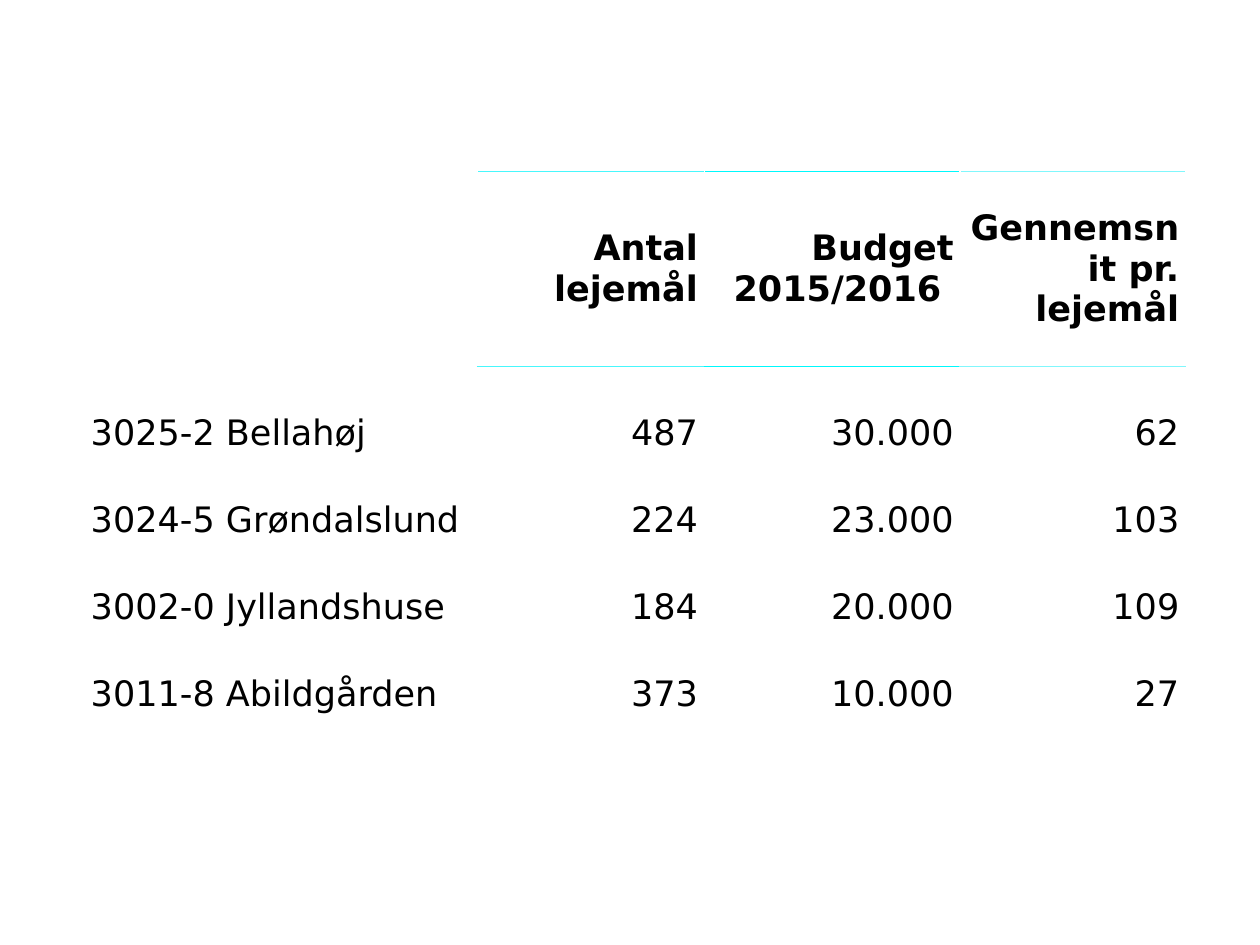
from lxml import etree
from pptx import Presentation
from pptx import util as u
from pptx.dml.color import RGBColor
from pptx.enum import text
from pptx.oxml.ns import qn

HEADINGS = ["Antal lejemål", "Budget 2015/2016 ", "Gennemsnit pr. lejemål"]
RULE_COLORS = ["48F7FC", "00F8FC", "80F7FC"]
ESTATES = [
    ("3025-2 Bellahøj", "487", "30.000", "62"),
    ("3024-5 Grøndalslund", "224", "23.000", "103"),
    ("3002-0 Jyllandshuse", "184", "20.000", "109"),
    ("3011-8 Abildgården", "373", "10.000", "27"),
]
COLUMN_SHARES = [15.6, 15.6, 18, 20.3, 17.9]
ROW_SHARES = [20.67] + [9.2] * len(ESTATES)
NAME_COLUMNS = 2


def color(value):
    return RGBColor.from_string(value)


class BudgetPage:
    font_name = "DejaVu Sans"
    font_size = 20
    ink = "000000"
    paper = "FFFFFF"

    def __init__(self, deck):
        self.deck = deck
        self.page = deck.slides.add_slide(deck.slide_layouts[6])

    def across(self, percent):
        return round(self.deck.slide_width * percent / 100)

    def down(self, percent):
        return round(self.deck.slide_height * percent / 100)

    def table(self, left, top, columns, rows):
        frame = self.page.shapes.add_table(
            len(rows), len(columns), self.across(left), self.down(top),
            self.across(sum(columns)), self.down(sum(rows)))
        grid = frame.table
        grid.first_row = grid.horz_banding = False
        for column, share in zip(grid.columns, columns):
            column.width = self.across(share)
        for row, share in zip(grid.rows, rows):
            row.height = self.down(share)
        for cell in grid.iter_cells():
            cell.fill.solid()
            cell.fill.fore_color.rgb = color(self.paper)
        return grid

    def label(self, cell, words, align=text.PP_ALIGN.RIGHT,
              anchor=text.MSO_ANCHOR.BOTTOM, bold=False):
        cell.margin_left = cell.margin_right = u.Inches(0.05)
        cell.margin_top = cell.margin_bottom = 0
        cell.vertical_anchor = anchor
        para = cell.text_frame.paragraphs[0]
        para.text = words
        para.alignment = align
        para.font.name = self.font_name
        para.font.size = u.Pt(self.font_size)
        para.font.bold = bold
        para.font.color.rgb = color(self.ink)

    def rule(self, cell, sides, shade):
        properties = cell._tc.get_or_add_tcPr()
        for position, side in enumerate(sides):
            line = etree.Element(qn(f"a:ln{side}"), w=str(u.Pt(1)))
            fill = etree.SubElement(line, qn("a:solidFill"))
            etree.SubElement(fill, qn("a:srgbClr"), val=shade)
            properties.insert(position, line)


def main():
    deck = Presentation()
    deck.slide_width, deck.slide_height = u.Inches(10), u.Inches(7.5)
    budget = BudgetPage(deck)
    grid = budget.table(6.7, 18.13, COLUMN_SHARES, ROW_SHARES)

    for column, (heading, shade) in enumerate(zip(HEADINGS, RULE_COLORS), NAME_COLUMNS):
        budget.label(grid.cell(0, column), heading,
                     anchor=text.MSO_ANCHOR.MIDDLE, bold=True)
        budget.rule(grid.cell(0, column), "TB", shade)
        budget.rule(grid.cell(1, column), "T", shade)

    for row, (name, *figures) in enumerate(ESTATES, 1):
        name_cell = grid.cell(row, 0)
        name_cell.merge(grid.cell(row, NAME_COLUMNS - 1))
        budget.label(name_cell, name, align=text.PP_ALIGN.LEFT)
        for column, figure in enumerate(figures, NAME_COLUMNS):
            budget.label(grid.cell(row, column), figure)

    deck.save("out.pptx")


if __name__ == "__main__":
    main()
